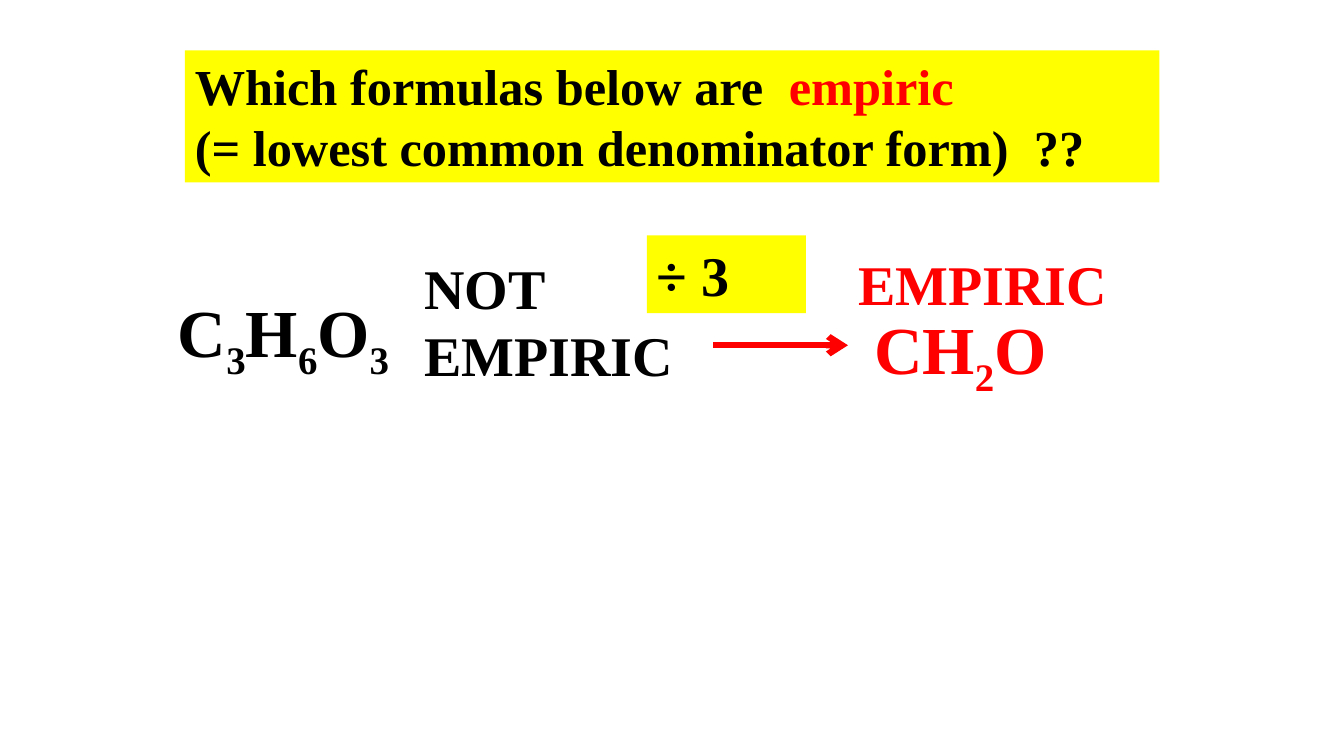
import pptx
import pptx.dml.color
import pptx.enum.shapes
import pptx.enum.text
import pptx.oxml.ns
import pptx.util
import lxml.etree

Cm = pptx.util.Cm
BLACK = pptx.dml.color.RGBColor(0x00, 0x00, 0x00)
RED = pptx.dml.color.RGBColor(0xFF, 0x00, 0x00)
YELLOW = pptx.dml.color.RGBColor(0xFF, 0xFF, 0x00)
FONT_NAME = "Times New Roman"
QUESTION_SIZE = 36
LABEL_SIZE = 40
FORMULA_SIZE = 48


def add_run(paragraph, text, size, color):
    run = paragraph.add_run()
    run.text = text
    run.font.name = FONT_NAME
    run.font.size = pptx.util.Pt(size)
    run.font.bold = True
    run.font.color.rgb = color
    return run


def add_text_box(slide, left, top, width, height, fill=None):
    shape = slide.shapes.add_textbox(left, top, width, height)
    shape.text_frame.word_wrap = True
    shape.text_frame.auto_size = pptx.enum.text.MSO_AUTO_SIZE.NONE
    if fill is not None:
        shape.fill.solid()
        shape.fill.fore_color.rgb = fill
    return shape.text_frame


def add_label(slide, left, top, width, height, text, color, fill=None):
    text_frame = add_text_box(slide, left, top, width, height, fill)
    add_run(text_frame.paragraphs[0], text, LABEL_SIZE, color)


def add_formula(slide, left, top, width, height, formula, color):
    text_frame = add_text_box(slide, left, top, width, height)
    for symbol in formula:
        run = add_run(text_frame.paragraphs[0], symbol, FORMULA_SIZE, color)
        if symbol.isdigit():
            run.font._element.set("baseline", "-25000")


def add_arrow(slide, left, top, length):
    connector = slide.shapes.add_connector(
        pptx.enum.shapes.MSO_CONNECTOR.STRAIGHT, left, top, left + length, top
    )
    connector.line.color.rgb = RED
    connector.line.width = pptx.util.Pt(4.5)
    qualified_name = pptx.oxml.ns.qn
    line = connector.line._get_or_add_ln()
    lxml.etree.SubElement(line, qualified_name("a:tailEnd"), type="arrow")
    lxml.etree.SubElement(connector._element.spPr, qualified_name("a:effectLst"))


def add_question(slide, left, top, width, height):
    text_frame = add_text_box(slide, left, top, width, height, YELLOW)
    first = text_frame.paragraphs[0]
    add_run(first, "Which formulas below are  ", QUESTION_SIZE, BLACK)
    add_run(first, "empiric", QUESTION_SIZE, RED)
    second = text_frame.add_paragraph()
    add_run(second, "(= lowest common denominator form)  ??", QUESTION_SIZE, BLACK)


def add_reduction(slide, left, top):
    label_width = Cm(7.42)
    label_height = Cm(1.96)
    formula_height = Cm(2.31)
    add_formula(slide, left, top + Cm(1.27), Cm(6.35), formula_height, "C3H6O3", BLACK)
    add_label(slide, left + Cm(6.22), top + Cm(0.33), label_width, Cm(3.68),
              "NOT EMPIRIC", BLACK)
    add_arrow(slide, left + Cm(13.74), top + Cm(2.77), Cm(3.4))
    add_label(slide, left + Cm(12.07), top, Cm(4.01), label_height,
              "÷ 3", BLACK, YELLOW)
    add_formula(slide, left + Cm(17.55), top + Cm(1.7), label_width, formula_height,
                "CH2O", RED)
    add_label(slide, left + Cm(17.15), top + Cm(0.23), label_width, label_height,
              "EMPIRIC", RED)


def main():
    presentation = pptx.Presentation()
    presentation.slide_width = Cm(33.87)
    presentation.slide_height = Cm(19.05)
    slide = presentation.slides.add_slide(presentation.slide_layouts[6])
    add_question(slide, Cm(4.66), Cm(1.27), Cm(24.56), Cm(3.33))
    add_reduction(slide, Cm(4.23), Cm(5.93))
    presentation.save("out.pptx")


if __name__ == "__main__":
    main()
